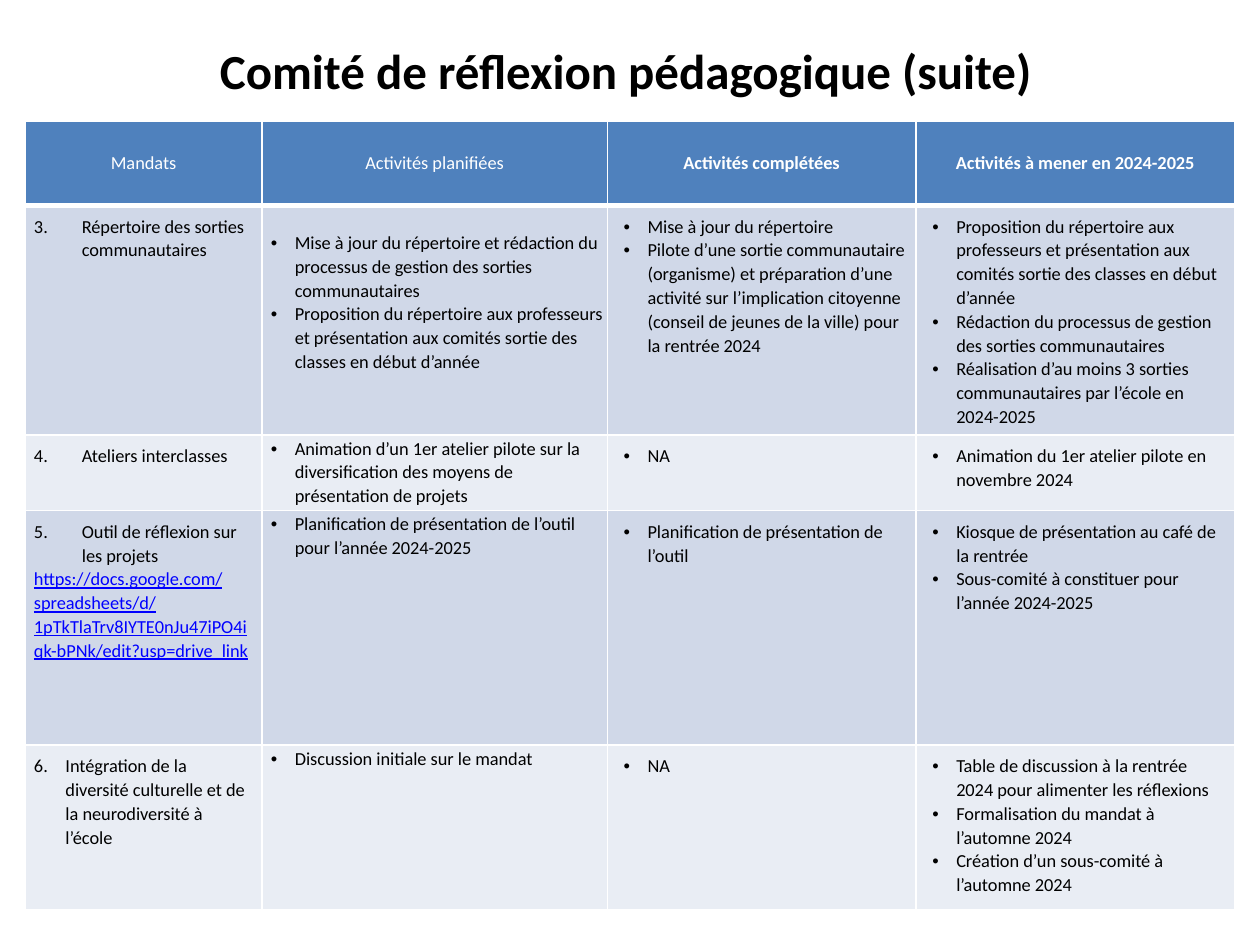
from lxml import etree
from pptx import Presentation
from pptx.dml.color import RGBColor
from pptx.enum.text import MSO_ANCHOR, PP_ALIGN
from pptx.oxml.ns import qn
from pptx.util import Inches, Pt

MIDDLE, TOP = MSO_ANCHOR.MIDDLE, MSO_ANCHOR.TOP
CENTER, LEFT = PP_ALIGN.CENTER, PP_ALIGN.LEFT
BLACK = RGBColor(0x00, 0x00, 0x00)
WHITE = RGBColor(0xFF, 0xFF, 0xFF)
LINK = RGBColor(0x00, 0x00, 0xFF)
HEAD = RGBColor(0x4F, 0x81, 0xBD)
BANDS = [RGBColor(0xD0, 0xD8, 0xE8), RGBColor(0xE9, 0xED, 0xF4)]

TITLE = "Comité de réflexion pédagogique (suite)"
HEADERS = ["Mandats", "Activités planifiées", "Activités complétées",
           "Activités à mener en 2024-2025"]
URL = ("https://docs.google.com/spreadsheets/d/"
       "1pTkTlaTrv8IYTE0nJu47iPO4iqk-bPNk/edit?usp=drive_link")
SHARE = ("Proposition du répertoire aux professeurs et présentation "
         "aux comités sortie des classes en début d’année")
ROWS = [
    [["Répertoire des sorties communautaires"],
     ["Mise à jour du répertoire et rédaction du processus de gestion "
      "des sorties communautaires", SHARE],
     ["Mise à jour du répertoire",
      "Pilote d’une sortie communautaire (organisme) et préparation d’une "
      "activité sur l’implication citoyenne (conseil de jeunes de la ville) "
      "pour la rentrée 2024"],
     [SHARE, "Rédaction du processus de gestion des sorties communautaires",
      "Réalisation d’au moins 3 sorties communautaires par l’école "
      "en 2024-2025"]],
    [["Ateliers interclasses"],
     ["Animation d’un 1er atelier pilote sur la diversification des moyens "
      "de présentation de projets"],
     ["NA"],
     ["Animation du 1er atelier pilote en novembre 2024"]],
    [["Outil de réflexion sur les projets", URL],
     ["Planification de présentation de l’outil pour l’année 2024-2025"],
     ["Planification de présentation de l’outil"],
     ["Kiosque de présentation au café de la rentrée",
      "Sous-comité à constituer pour l’année 2024-2025"]],
    [["Intégration de la diversité culturelle et de la neurodiversité "
      "à l’école"],
     ["Discussion initiale sur le mandat"],
     ["NA"],
     ["Table de discussion à la rentrée 2024 pour alimenter les réflexions",
      "Formalisation du mandat à l’automne 2024",
      "Création d’un sous-comité à l’automne 2024"]],
]
FIRST = 3  # number of the first mandate on this slide
WIDTHS = [1.88, 2.74, 2.45, 2.53]
HEIGHTS = [0.67, 1.82, 0.6, 1.86, 1.31]


def write(para, text, size=10.5, color=BLACK, bold=False, underline=False):
    run = para.add_run()
    run.text = text
    style = {"name": "Calibri", "size": Pt(size), "bold": bold,
             "underline": underline}
    for key, value in style.items():
        setattr(run.font, key, value)
    run.font.color.rgb = color


def mark(para, left, hang, tag, **attrs):
    """Give a paragraph a hanging indent and a bullet or number."""
    props = para._p.get_or_add_pPr()
    props.set("marL", str(Inches(left)))
    props.set("indent", str(-Inches(hang)))
    etree.SubElement(props, qn("a:buFont"), typeface="Arial" if tag == "a:buChar" else "+mj-lt")
    etree.SubElement(props, qn(tag), **attrs)


deck = Presentation()
deck.slide_width, deck.slide_height = Inches(10), Inches(7.5)
slide = deck.slides.add_slide(deck.slide_layouts[6])

title = slide.shapes.add_textbox(Inches(0.28), Inches(0.13),
                                 Inches(9.37), Inches(0.85)).text_frame
title.word_wrap = True
title.vertical_anchor = MIDDLE
title.paragraphs[0].alignment = CENTER
write(title.paragraphs[0], TITLE, size=28, bold=True)

table = slide.shapes.add_table(
    len(HEIGHTS), len(WIDTHS), Inches(0.2), Inches(0.96),
    Inches(sum(WIDTHS)), Inches(sum(HEIGHTS))).table
for col, width in zip(table.columns, WIDTHS):
    col.width = Inches(width)
for row, height in zip(table.rows, HEIGHTS):
    row.height = Inches(height)

# Borders and fills
for r, row in enumerate(table.rows):
    for cell in row.cells:
        props = cell._tc.get_or_add_tcPr()
        for side in "LRTB":
            weight = 3 if r == 0 and side == "B" else 1
            line = etree.SubElement(props, qn("a:ln" + side), w=str(Pt(weight)))
            fill = etree.SubElement(line, qn("a:solidFill"))
            etree.SubElement(fill, qn("a:srgbClr"), val=str(WHITE))
        cell.fill.solid()
        cell.fill.fore_color.rgb = HEAD if r == 0 else BANDS[(r - 1) % 2]

# Header row
for c, text in enumerate(HEADERS):
    cell = table.cell(0, c)
    cell.vertical_anchor = MIDDLE
    para = cell.text_frame.paragraphs[0]
    para.alignment = CENTER
    write(para, text, color=WHITE, bold=c > 1)

# Body rows
for r, row in enumerate(ROWS):
    for c, items in enumerate(row):
        cell = table.cell(r + 1, c)
        cell.vertical_anchor = TOP
        inset = Inches(0.01 if c == 1 else 0.07)
        for side in ("left", "right", "top", "bottom"):
            setattr(cell, "margin_" + side, inset)
        if (r, c) == (0, 1):
            cell.margin_top = Inches(0.2)
        frame = cell.text_frame
        for i, text in enumerate(items):
            para = frame.add_paragraph() if i else frame.paragraphs[0]
            if c:
                mark(para, 0.25, 0.19, "a:buChar", char="•")
            elif text != URL:
                indent = 0.25 if r == len(ROWS) - 1 else 0.38
                mark(para, indent, indent, "a:buAutoNum",
                     type="arabicPeriod", startAt=str(FIRST + r))
            para.alignment = LEFT
            para.line_spacing = 1.07
            write(para, text, color=LINK if text == URL else BLACK,
                  underline=text == URL)

deck.save("out.pptx")
